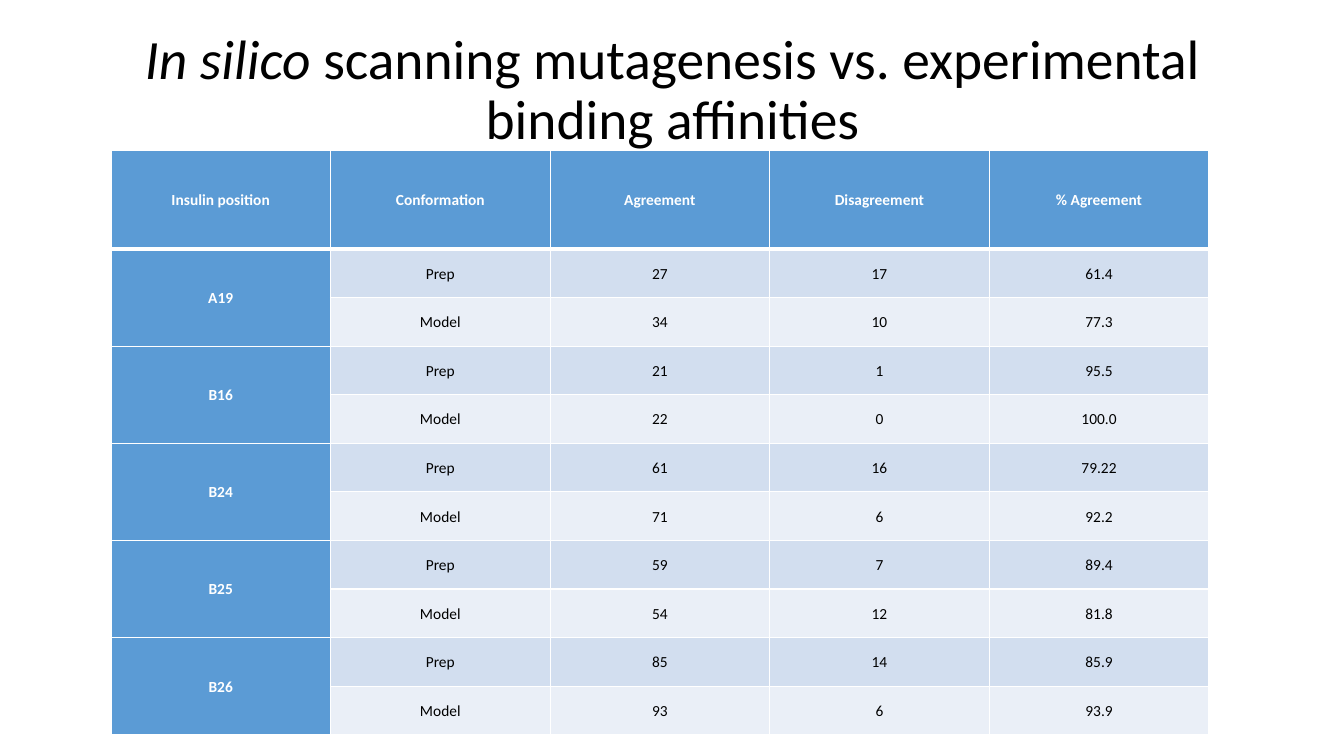
"""Build the slide comparing mutagenesis scanning with binding affinities."""
from dataclasses import dataclass

from lxml.etree import SubElement
from pptx import Presentation
from pptx.dml.color import RGBColor
from pptx.enum.text import MSO_ANCHOR, PP_ALIGN
from pptx.oxml.ns import qn
from pptx.util import Inches, Pt

WHITE = RGBColor(0xFF, 0xFF, 0xFF)
BLACK = RGBColor(0x00, 0x00, 0x00)
BLUE = RGBColor(0x5B, 0x9B, 0xD5)
BAND_DARK = RGBColor(0xD2, 0xDE, 0xEF)
BAND_LIGHT = RGBColor(0xEA, 0xEF, 0xF7)
FONT = "Calibri"
HEADER_HEIGHT = 0.98
TABLE_HEIGHT = 5.8


@dataclass(frozen=True)
class CellStyle:
    fill: RGBColor
    color: RGBColor
    bold: bool = False
    top: float = 1
    bottom: float = 1


@dataclass(frozen=True)
class Result:
    conformation: str
    agreement: str
    disagreement: str
    percent: str

    def values(self) -> tuple[str, ...]:
        return self.conformation, self.agreement, self.disagreement, self.percent


HEADERS = ("Insulin position", "Conformation", "Agreement", "Disagreement", "% Agreement")
POSITIONS = {
    "A19": (Result("Prep", "27", "17", "61.4"), Result("Model", "34", "10", "77.3")),
    "B16": (Result("Prep", "21", "1", "95.5"), Result("Model", "22", "0", "100.0")),
    "B24": (Result("Prep", "61", "16", "79.22"), Result("Model", "71", "6", "92.2")),
    "B25": (Result("Prep", "59", "7", "89.4"), Result("Model", "54", "12", "81.8")),
    "B26": (Result("Prep", "85", "14", "85.9"), Result("Model", "93", "6", "93.9")),
}


def add_run(p, text: str, size: float, color: RGBColor, bold=False, italic=False) -> None:
    r = p.add_run()
    r.text = text
    r.font.name, r.font.size = FONT, Pt(size)
    r.font.bold, r.font.italic = bold, italic
    r.font.color.rgb = color


def add_borders(cell, style: CellStyle) -> None:
    props = cell._tc.get_or_add_tcPr()
    for side, width in (("L", 1), ("R", 1), ("T", style.top), ("B", style.bottom)):
        line = SubElement(props, qn(f"a:ln{side}"), w=str(Pt(width)))
        SubElement(SubElement(line, qn("a:solidFill")), qn("a:srgbClr"), val=str(WHITE))


def style_cell(cell, style: CellStyle, text: str = "") -> None:
    add_borders(cell, style)
    cell.fill.solid()
    cell.fill.fore_color.rgb = style.fill
    cell.vertical_anchor = MSO_ANCHOR.MIDDLE
    cell.margin_left = cell.margin_right = Inches(0.07)
    cell.margin_top = cell.margin_bottom = 0
    p = cell.text_frame.paragraphs[0]
    p.alignment, p.line_spacing = PP_ALIGN.CENTER, 1.07
    if text:
        add_run(p, text, 11, style.color, style.bold)


def add_title(s) -> None:
    tf = s.shapes.add_textbox(Inches(0.92), Inches(0.4), Inches(11.5), Inches(1.01)).text_frame
    tf.word_wrap = True
    tf.vertical_anchor = MSO_ANCHOR.MIDDLE
    p = tf.paragraphs[0]
    p.alignment, p.line_spacing = PP_ALIGN.CENTER, 0.9
    add_run(p, "In silico ", 39.6, BLACK, italic=True)
    add_run(p, "scanning mutagenesis vs. experimental binding affinities", 39.6, BLACK)


def add_results(s) -> None:
    count = sum(len(results) for results in POSITIONS.values())
    table = s.shapes.add_table(count + 1, len(HEADERS), Inches(1.1), Inches(1.49),
                               Inches(10.89), Inches(TABLE_HEIGHT)).table
    table.first_col = True
    for i, row in enumerate(table.rows):
        row.height = Inches((TABLE_HEIGHT - HEADER_HEIGHT) / count if i else HEADER_HEIGHT)
    for col, header in enumerate(HEADERS):
        style_cell(table.cell(0, col), CellStyle(BLUE, WHITE, True, bottom=3), header)

    row = 1
    for position, results in POSITIONS.items():
        first = row
        for fill, result in zip((BAND_DARK, BAND_LIGHT), results):
            top = 3 if row == 1 else 1
            label = position if row == first else ""
            style_cell(table.cell(row, 0), CellStyle(BLUE, WHITE, True, top), label)
            for col, value in enumerate(result.values(), 1):
                style_cell(table.cell(row, col), CellStyle(fill, BLACK, top=top), value)
            row += 1
        table.cell(first, 0).merge(table.cell(row - 1, 0))


def main() -> None:
    prs = Presentation()
    prs.slide_width, prs.slide_height = Inches(13.33), Inches(7.5)
    s = prs.slides.add_slide(prs.slide_layouts[6])
    add_title(s)
    add_results(s)
    prs.save("out.pptx")


if __name__ == "__main__":
    main()
